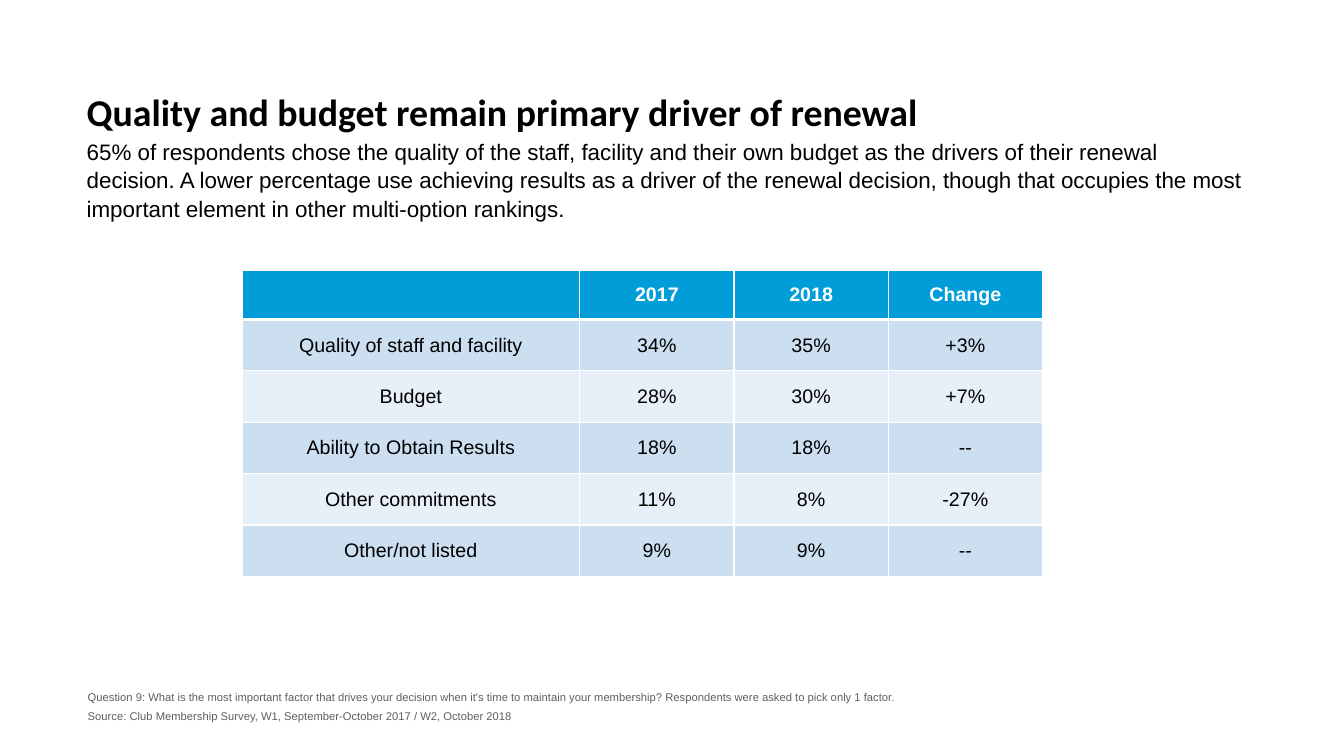
from lxml import etree
from pptx import Presentation
from pptx import util as u
from pptx.dml.color import RGBColor
from pptx.enum import text
from pptx.oxml.ns import qn

PX = 9144
WHITE, BLACK, GREY = "FFFFFF", "000000", "5F5F5F"
HEADER_BLUE, BANDS = "009DD9", ("CCDFF1", "E7EFF8")
HEADLINE = "Quality and budget remain primary driver of renewal"
SUMMARY = (
    "65% of respondents chose the quality of the staff, facility and their own budget "
    "as the drivers of their renewal decision. A lower percentage use achieving results "
    "as a driver of the renewal decision, though that occupies the most important "
    "element in other multi-option rankings."
)
FOOTNOTES = (
    "Question 9: What is the most important factor that drives your decision when it's "
    "time to maintain your membership? Respondents were asked to pick only 1 factor.",
    "Source: Club Membership Survey, W1, September-October 2017 / W2, October 2018",
)
DRIVERS = (
    ("", "2017", "2018", "Change"),
    ("Quality of staff and facility", "34%", "35%", "+3%"),
    ("Budget", "28%", "30%", "+7%"),
    ("Ability to Obtain Results", "18%", "18%", "--"),
    ("Other commitments", "11%", "8%", "-27%"),
    ("Other/not listed", "9%", "9%", "--"),
)
COLUMN_WIDTHS = (335, 153, 153, 153)
HEADER_HEIGHT, ROW_HEIGHT = 49, 51


def px(*lengths):
    return [u.Emu(length * PX) for length in lengths]


def color(value):
    return RGBColor.from_string(value)


def style_runs(paragraph, size, ink, font="Arial", bold=False):
    for run in paragraph.runs:
        run.font.name = font
        run.font.size = u.Pt(size)
        run.font.bold = bold
        run.font.color.rgb = color(ink)


def add_text(slide, place, lines, size, ink, font="Arial", bold=False,
             anchor=text.MSO_ANCHOR.TOP, line_spacing=1.0, gap=0):
    frame = slide.shapes.add_textbox(*px(*place)).text_frame
    frame.word_wrap = True
    frame.vertical_anchor = anchor
    frame.margin_left = frame.margin_right = frame.margin_top = frame.margin_bottom = 0
    frame.text = "\n".join(lines)
    for index, paragraph in enumerate(frame.paragraphs):
        paragraph.line_spacing = line_spacing
        paragraph.space_before = u.Pt(gap if index else 0)
        style_runs(paragraph, size, ink, font, bold)


def add_borders(cell, top, bottom):
    properties = cell._tc.get_or_add_tcPr()
    for side, points in (("L", 1), ("R", 1), ("T", top), ("B", bottom)):
        border = etree.SubElement(properties, qn(f"a:ln{side}"), w=str(u.Pt(points)))
        fill = etree.SubElement(border, qn("a:solidFill"))
        etree.SubElement(fill, qn("a:srgbClr"), val=WHITE)


def fill_cell(cell, label, row):
    header = row == 0
    add_borders(cell, 3 if row == 1 else 1, 3 if header else 1)
    cell.fill.solid()
    cell.fill.fore_color.rgb = color(HEADER_BLUE if header else BANDS[(row - 1) % 2])
    cell.vertical_anchor = text.MSO_ANCHOR.MIDDLE
    cell.margin_left, cell.margin_right, cell.margin_top, cell.margin_bottom = px(8, 8, 4, 4)
    cell.text_frame.text = label
    paragraph = cell.text_frame.paragraphs[0]
    paragraph.alignment = text.PP_ALIGN.CENTER
    style_runs(paragraph, 14, WHITE if header else BLACK, bold=header)


def add_driver_table(slide, left, top):
    heights = [HEADER_HEIGHT] + [ROW_HEIGHT] * (len(DRIVERS) - 1)
    place = px(left, top, sum(COLUMN_WIDTHS), sum(heights))
    table = slide.shapes.add_table(len(DRIVERS), len(COLUMN_WIDTHS), *place).table
    for column, width in zip(table.columns, px(*COLUMN_WIDTHS)):
        column.width = width
    for row, height in zip(table.rows, px(*heights)):
        row.height = height
    for row, labels in enumerate(DRIVERS):
        for column, label in enumerate(labels):
            fill_cell(table.cell(row, column), label, row)


def main():
    deck = Presentation()
    deck.slide_width, deck.slide_height = px(1333, 750)
    slide = deck.slides.add_slide(deck.slide_layouts[6])
    add_text(slide, (86, 83, 1174, 50), [HEADLINE], 27, BLACK, "Calibri", True,
             text.MSO_ANCHOR.BOTTOM, 0.8)
    add_text(slide, (86, 136, 1148, 80), [SUMMARY], 16, BLACK, line_spacing=1.05)
    add_driver_table(slide, 240, 268)
    add_text(slide, (87, 685, 1135, 32), FOOTNOTES, 8, GREY, gap=4)
    deck.save("out.pptx")


if __name__ == "__main__":
    main()
